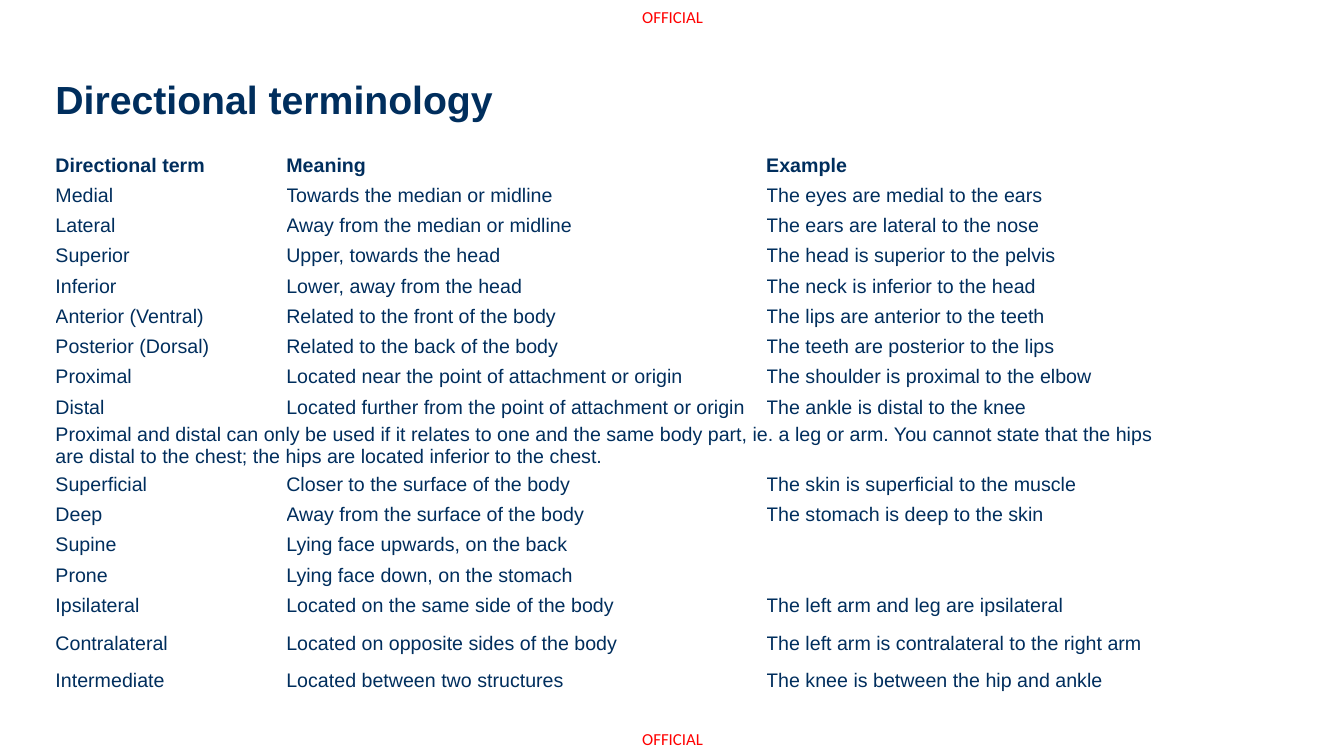
from lxml.etree import SubElement
from pptx import Presentation
from pptx.dml.color import RGBColor
from pptx.enum.text import MSO_ANCHOR as Anchor
from pptx.oxml.ns import qn

PX = 9144
NAVY, RED = "002E5D", "FF0000"
COLUMNS = [229, 476, 416]
ROW, TALL_ROW = 30, 45
TALL_ROWS = {9, 15}
MARKING = {"name": "Calibri", "size": 12, "bold": False, "color": RED}
TITLE = {"name": "Arial", "size": 28, "bold": True, "color": NAVY}
HEADER = {"name": "Arial", "size": 14, "bold": True, "color": NAVY}
BODY = {**HEADER, "bold": False}
NO_MARGINS = dict.fromkeys(["margin_left", "margin_top", "margin_right", "margin_bottom"], 0)

NOTE = (
    "Proximal and distal can only be used if it relates to one and the same body part, "
    "ie. a leg or arm. You cannot state that the hips are distal to the chest; "
    "the hips are located inferior to the chest."
)
TERMS = [
    ["Directional term", "Meaning", "Example"],
    ["Medial", "Towards the median or midline", "The eyes are medial to the ears"],
    ["Lateral", "Away from the median or midline", "The ears are lateral to the nose"],
    ["Superior", "Upper, towards the head", "The head is superior to the pelvis"],
    ["Inferior", "Lower, away from the head", "The neck is inferior to the head"],
    ["Anterior (Ventral)", "Related to the front of the body", "The lips are anterior to the teeth"],
    ["Posterior (Dorsal)", "Related to the back of the body", "The teeth are posterior to the lips"],
    ["Proximal", "Located near the point of attachment or origin", "The shoulder is proximal to the elbow"],
    ["Distal", "Located further from the point of attachment or origin", "The ankle is distal to the knee"],
    [NOTE],
    ["Superficial", "Closer to the surface of the body", "The skin is superficial to the muscle"],
    ["Deep", "Away from the surface of the body", "The stomach is deep to the skin"],
    ["Supine", "Lying face upwards, on the back", ""],
    ["Prone", "Lying face down, on the stomach", ""],
    ["Ipsilateral", "Located on the same side of the body", "The left arm and leg are ipsilateral"],
    ["Contralateral", "Located on opposite sides of the body", "The left arm is contralateral to the right arm"],
    ["Intermediate", "Located between two structures", "The knee is between the hip and ankle"],
]


def px(length):
    """Turn pixels into EMU."""
    return length * PX


def color(code):
    """Turn a hex string into a colour."""
    return RGBColor.from_string(code)


def apply(target, values):
    """Set each named attribute on the target."""
    for name, value in values.items():
        setattr(target, name, value)


def write(para, text, style):
    """Write one styled span, or size the empty paragraph."""
    if not text:
        SubElement(para._p, qn("a:endParaRPr"), sz=str(style["size"] * 100))
        return
    span = para.add_run()
    span.text = text
    apply(span.font, {"name": style["name"], "size": style["size"] * 12700, "bold": style["bold"]})
    span.font.color.rgb = color(style["color"])


def add_text(page, box, text, style, line_spacing=1.0):
    """Place a line of text in a box without margins."""
    frame = page.shapes.add_textbox(*map(px, box)).text_frame
    apply(frame, {**NO_MARGINS, "word_wrap": True, "vertical_anchor": Anchor.TOP})
    frame.paragraphs[0].line_spacing = line_spacing
    write(frame.paragraphs[0], text, style)


def add_markings(page, box):
    """Place the marking at the top and bottom of the box."""
    left, top, width, height = box
    line = 20
    for y in (top, top + height - line):
        add_text(page, (left, y, width, line), "OFFICIAL", MARKING)


def add_terms(page, box):
    """Place the table of terms, with the note across all columns."""
    table = page.shapes.add_table(len(TERMS), len(COLUMNS), *map(px, box)).table
    apply(table, {"first_row": False, "horz_banding": False})
    for column, width in zip(table.columns, COLUMNS):
        column.width = px(width)
    for index, texts in enumerate(TERMS):
        table.rows[index].height = px(TALL_ROW if index in TALL_ROWS else ROW)
        for cell in table.rows[index].cells:
            apply(cell, {**NO_MARGINS, "vertical_anchor": Anchor.MIDDLE})
            cell.fill.background()
        if len(texts) == 1:
            table.cell(index, 0).merge(table.cell(index, len(COLUMNS) - 1))
        for position, text in enumerate(texts):
            para = table.cell(index, position).text_frame.paragraphs[0]
            write(para, text, BODY if index else HEADER)


def main():
    """Build the deck and save it."""
    deck = Presentation()
    apply(deck, {"slide_width": px(1333), "slide_height": px(750)})
    page = deck.slides.add_slide(deck.slide_layouts[6])
    add_markings(page, (637, 7, 64, 736))
    add_text(page, (55, 80, 730, 79), "Directional terminology", TITLE, 0.9)
    add_terms(page, (55, 149, sum(COLUMNS), 540))
    deck.save("out.pptx")


if __name__ == "__main__":
    main()
